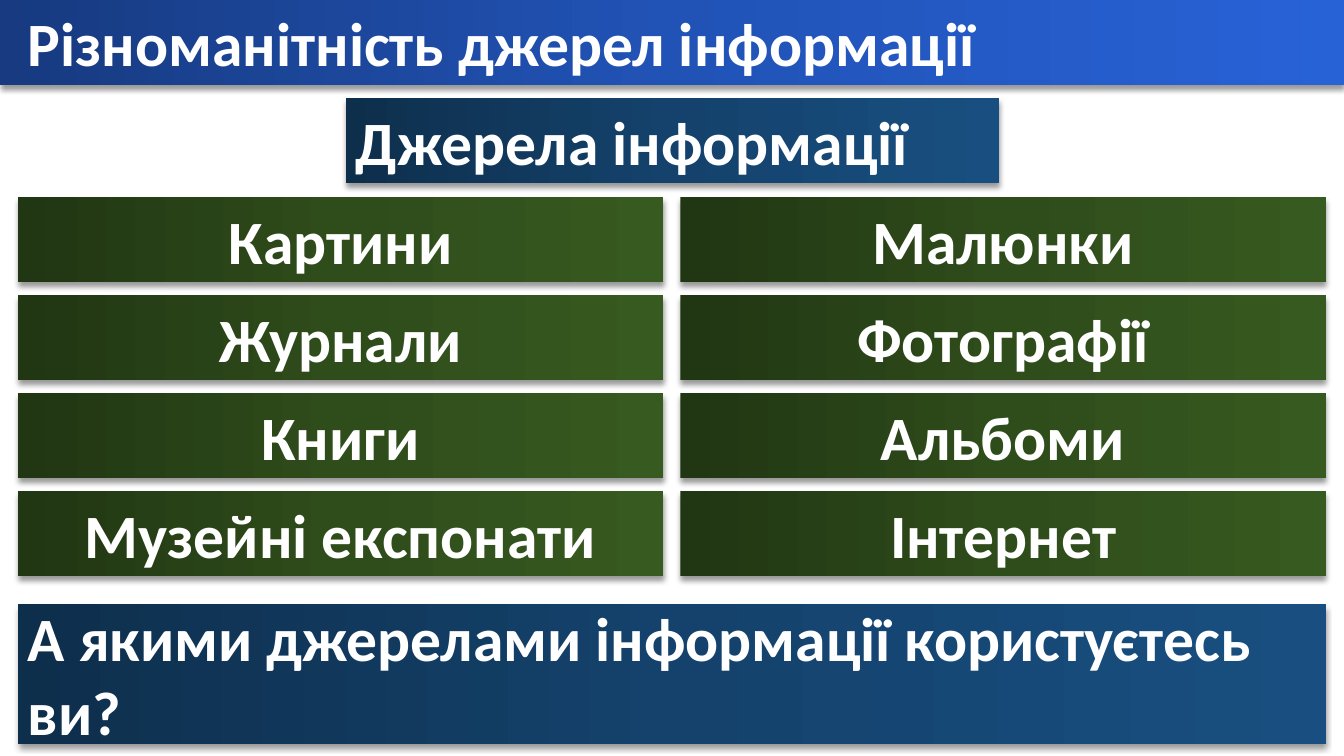
from pptx import Presentation
from pptx.dml.color import RGBColor
from pptx.enum.shapes import MSO_SHAPE
from pptx.enum.text import MSO_ANCHOR, MSO_AUTO_SIZE, PP_ALIGN
from pptx.oxml import parse_xml
from pptx.oxml.ns import nsdecls
from pptx.util import Pt

RECTANGLE = MSO_SHAPE.RECTANGLE
TOP, MIDDLE = MSO_ANCHOR.TOP, MSO_ANCHOR.MIDDLE
LEFT, CENTER = PP_ALIGN.LEFT, PP_ALIGN.CENTER
GROW = MSO_AUTO_SIZE.SHAPE_TO_FIT_TEXT

SLIDE_WIDTH, SLIDE_HEIGHT = 1344, 756
SCALE = 12192000 / SLIDE_WIDTH
MARGIN = 18
BAR_HEIGHT = 85

COLORS = {"text": "FFFFFF", "shadow": "000000"}
GRADIENTS = {
    "title": {0: "173A80", 50: "2153B6", 100: "2862D7"},
    "banner": {0: "0E2F4C", 50: "14426C", 100: "184F80"},
    "source": {0: "213613", 50: "2F4C1B", 100: "375A20"},
}
FONT = {"name": "Calibri", "size": Pt(44), "bold": True}
SOURCES = [
    ("Картини", "Малюнки"),
    ("Журнали", "Фотографії"),
    ("Книги", "Альбоми"),
    ("Музейні експонати", "Інтернет"),
]


def px(*lengths):
    return [round(length * SCALE) for length in lengths]


def write_text(shape, text, align=LEFT, anchor=MIDDLE):
    frame = shape.text_frame
    frame.word_wrap = True
    frame.vertical_anchor = anchor
    para = frame.paragraphs[0]
    para.alignment = align
    span = para.add_run()
    span.text = text
    for name, value in FONT.items():
        setattr(span.font, name, value)
    span.font.color.rgb = RGBColor.from_string(COLORS["text"])


def add_bar(slide, box, gradient):
    """Add a borderless rectangle with a left-to-right gradient and a soft shadow below."""
    bar = slide.shapes.add_shape(RECTANGLE, *px(*box))
    bar.line.fill.background()
    stops = "".join(
        f'<a:gs pos="{percent * 1000}"><a:srgbClr val="{color}"/></a:gs>'
        for percent, color in GRADIENTS[gradient].items()
    )
    outline = bar.line._get_or_add_ln()
    outline.addprevious(parse_xml(
        f'<a:gradFill {nsdecls("a")} rotWithShape="1"><a:gsLst>{stops}</a:gsLst>'
        '<a:lin ang="0" scaled="0"/></a:gradFill>'
    ))
    outline.addnext(parse_xml(
        f'<a:effectLst {nsdecls("a")}>'
        f'<a:outerShdw blurRad="{Pt(4)}" dist="{Pt(3)}" dir="5400000" rotWithShape="0">'
        f'<a:srgbClr val="{COLORS["shadow"]}"><a:alpha val="40000"/></a:srgbClr>'
        '</a:outerShdw></a:effectLst>'
    ))
    return bar


def add_title(slide, box, text):
    left, top, width, height = box
    add_bar(slide, box, "title")
    label = slide.shapes.add_textbox(*px(left + MARGIN, top, width - 2 * MARGIN, height))
    write_text(label, text, anchor=TOP)
    label.text_frame.auto_size = GROW


def add_banner(slide, box, text):
    write_text(add_bar(slide, box, "banner"), text)


def add_source_grid(slide, box, rows):
    left, top, width, height = box
    column_gap = 17
    bar_width = (width - column_gap) / 2
    row_pitch = (height - BAR_HEIGHT) / (len(rows) - 1)
    for row, names in enumerate(rows):
        for column, name in enumerate(names):
            cell = (left + column * (bar_width + column_gap),
                    top + row * row_pitch, bar_width, BAR_HEIGHT)
            write_text(add_bar(slide, cell, "source"), name, CENTER)


def main():
    deck = Presentation()
    deck.slide_width, deck.slide_height = px(SLIDE_WIDTH, SLIDE_HEIGHT)
    slide = deck.slides.add_slide(deck.slide_layouts[6])
    content_width = SLIDE_WIDTH - 2 * MARGIN
    add_title(slide, (0, 0, SLIDE_WIDTH, BAR_HEIGHT), "Різноманітність джерел інформації")
    add_banner(slide, (346, 98, 653, BAR_HEIGHT), "Джерела інформації")
    add_source_grid(slide, (MARGIN, 197, content_width, 379), SOURCES)
    add_banner(slide, (MARGIN, 604, content_width, 140),
               "А якими джерелами інформації користуєтесь ви?")
    deck.save("out.pptx")


if __name__ == "__main__":
    main()
